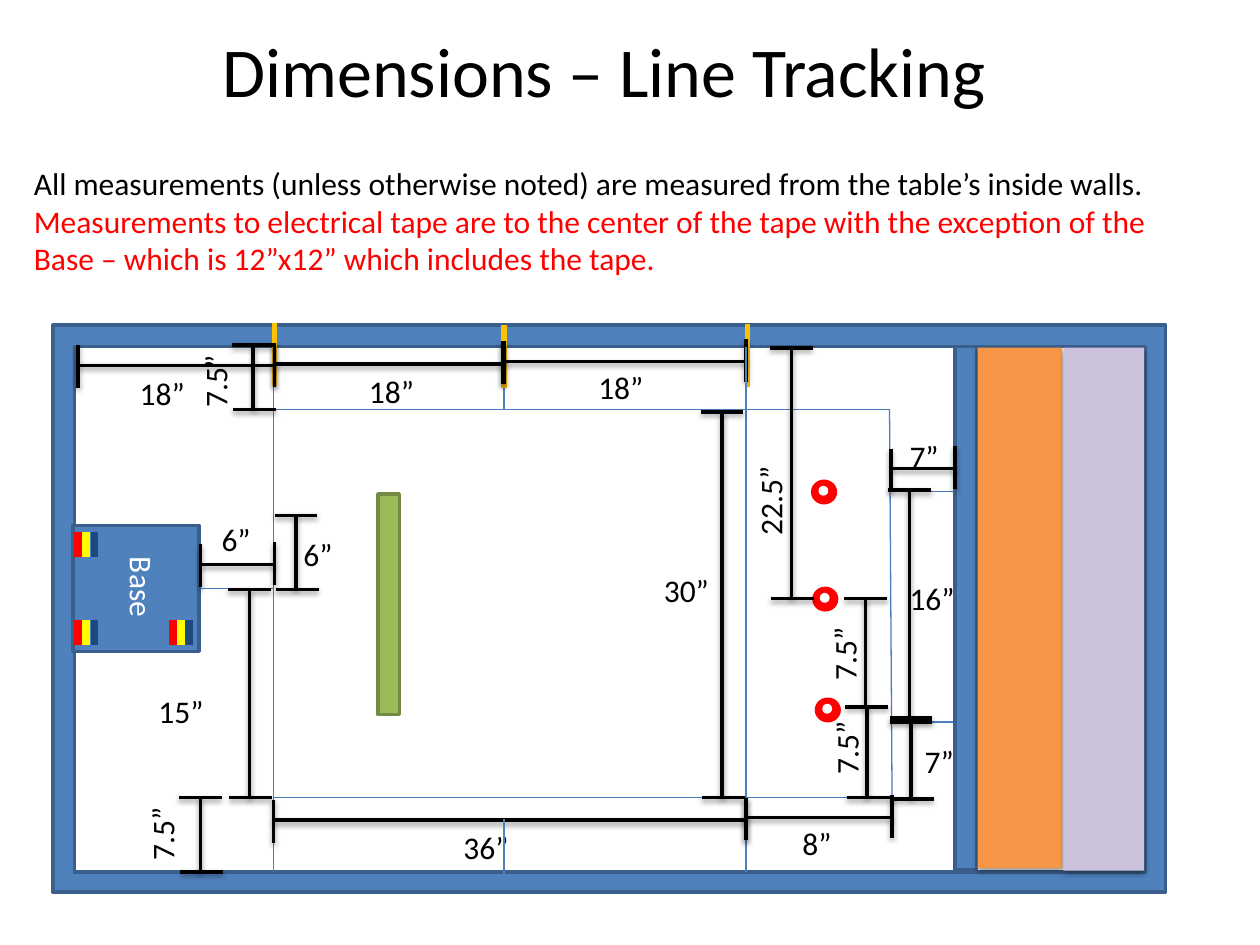
"""Build the line tracking course dimensions slide."""
from lxml.etree import SubElement
from pptx import Presentation
from pptx.dml.color import RGBColor
from pptx.enum.shapes import MSO_CONNECTOR as Connector, MSO_SHAPE as Shape
from pptx.enum.text import PP_ALIGN as Align
from pptx.oxml.ns import qn
from pptx.util import Inches, Pt

BLACK = RGBColor(0x00, 0x00, 0x00)
WHITE = RGBColor(0xFF, 0xFF, 0xFF)
RED = RGBColor(0xFF, 0x00, 0x00)
YELLOW = RGBColor(0xFF, 0xFF, 0x00)
NAVY = RGBColor(0x1F, 0x49, 0x7D)
BLUE = RGBColor(0x4F, 0x81, 0xBD)
EDGE = RGBColor(0x3A, 0x5F, 0x8C)
TAPE = RGBColor(0x4B, 0x7E, 0xBC)
GREEN = RGBColor(0x9B, 0xBB, 0x59)
GREEN_EDGE = RGBColor(0x73, 0x8A, 0x42)
ORANGE = RGBColor(0xF7, 0x96, 0x46)
LILAC = RGBColor(0xCC, 0xC1, 0xDA)
GOLD = RGBColor(0xFF, 0xC0, 0x00)

TITLE = "Dimensions – Line Tracking"
NOTES = [
    ("All measurements (unless otherwise noted) are measured from the table’s inside walls.", BLACK),
    ("Measurements to electrical tape are to the center of the tape with the exception of the "
     "Base – which is 12”x12” which includes the tape.", RED),
]
WALLS = [(0.42, 2.58, 8.83, 4.5, BLUE), (0.59, 2.75, 8.5, 4.17, WHITE)]
DIVIDER = (7.58, 2.75, 0.17, 4.15)
BARRIER = (3, 3.92, 0.17, 1.75)
ZONES = [(7.76, 2.76, 0.67, 4.13, ORANGE), (8.44, 2.76, 0.64, 4.15, LILAC)]
BASE = (0.58, 4.17, 1, 1)
FLAGS = [(0.62, 4.92), (1.37, 4.92), (0.62, 4.22)]
FLAG_COLORS = [RED, YELLOW, NAVY]
RINGS = [(6.46, 4.67), (6.45, 3.82), (6.48, 5.55)]
GUIDES = [(5.92, 6.92, 5.92, 6.42), (4, 3.25, 4, 2.75)]
FRONT_GUIDES = [(5.92, 3.25, 5.92, 2.75), (4, 7, 4, 6.5)]
TAPES = [
    (1.58, 4.67, 2.17, 4.67), (2.17, 4.67, 2.17, 2.75), (5.92, 3.25, 2.17, 3.25),
    (5.92, 3.25, 5.92, 6.33), (5.92, 6.33, 2.17, 6.33), (2.17, 6.92, 2.17, 4.67),
    (5.92, 3.25, 7.06, 3.25), (5.92, 6.33, 7.08, 6.33), (7.06, 3.25, 7.08, 6.33),
    (7.07, 3.9, 7.58, 3.9), (7.08, 5.73, 7.56, 5.73),
]
GOLD_MARKS = [(2.18, 2.56), (5.93, 2.57), (4, 2.58)]
# label, start, end, level, label left, top, width
HORIZONTAL = [
    ("36”", 2.17, 5.92, 6.51, 3.58, 6.52, 0.58),
    ("6”", 1.59, 2.18, 4.48, 1.66, 4.08, 0.58),
    ("8”", 5.92, 7.08, 6.49, 6.27, 6.49, 0.6),
    ("7”", 7.07, 7.58, 3.72, 7.12, 3.42, 0.55),
    ("18”", 0.62, 2.18, 2.9, 1.01, 2.92, 0.82),
    ("18”", 2.18, 4, 2.89, 2.83, 2.9, 0.95),
    ("18”", 3.99, 5.92, 2.87, 4.65, 2.87, 1.01),
]
# label, top, bottom, level, label left, top, width, label rotation, has lower tick
VERTICAL = [
    ("15”", 4.68, 6.33, 1.98, 1.16, 5.44, 0.76, 0, True),
    ("6”", 4.09, 4.68, 2.35, 2.31, 4.2, 0.58, 0, True),
    ("30”", 3.27, 6.33, 5.73, 5.17, 4.48, 0.58, 0, True),
    ("7”", 5.73, 6.34, 7.23, 7.24, 5.84, 0.46, 0, True),
    ("16”", 3.89, 5.7, 7.22, 7.12, 4.55, 0.59, 0, True),
    ("7.5”", 4.75, 5.61, 6.87, 6.31, 4.91, 0.78, 270, False),
    ("7.5”", 5.61, 6.33, 6.88, 6.31, 5.64, 0.81, 270, True),
    ("22.5”", 2.76, 4.75, 6.28, 5.72, 3.76, 0.78, 270, True),
    ("7.5”", 6.33, 6.92, 1.59, 0.88, 6.32, 0.81, 270, True),
    ("7.5”", 2.74, 3.25, 2.01, 1.3, 2.73, 0.81, 270, True),
]


def add_effects(shape, shadow):
    properties = shape._element.spPr
    for effects in properties.findall(qn("a:effectLst")):
        properties.remove(effects)
    effects = SubElement(properties, qn("a:effectLst"))
    if shadow:
        outer = SubElement(effects, qn("a:outerShdw"), blurRad=str(Pt(3.1)), dist=str(Pt(1.6)),
                           dir="5400000", rotWithShape="0")
        color = SubElement(outer, qn("a:srgbClr"), val="000000")
        SubElement(color, qn("a:alpha"), val="38000")


def add_block(slide, left, top, width, height, fill, line=None, kind=Shape.RECTANGLE, shadow=False):
    shape = slide.shapes.add_shape(kind, Inches(left), Inches(top), Inches(width), Inches(height))
    shape.fill.solid()
    shape.fill.fore_color.rgb = fill
    if line is None:
        shape.line.fill.background()
    else:
        shape.line.color.rgb = line
        shape.line.width = Pt(2)
    add_effects(shape, shadow)
    return shape


def add_line(slide, ends, color, width, shadow=False):
    line = slide.shapes.add_connector(Connector.STRAIGHT, *map(Inches, ends))
    line.line.color.rgb = color
    line.line.width = Pt(width)
    add_effects(line, shadow)


def add_text(slide, left, top, width, height, paragraphs, size=18, align=Align.LEFT, rotation=0):
    box = slide.shapes.add_textbox(Inches(left), Inches(top), Inches(width), Inches(height))
    box.rotation = rotation
    frame = box.text_frame
    frame.word_wrap = True
    frame.text = "\n".join(text for text, _ in paragraphs)
    for paragraph, (_, color) in zip(frame.paragraphs, paragraphs):
        paragraph.alignment = align
        font = paragraph.runs[0].font
        font.name, font.size = "Calibri", Pt(size)
        font.color.rgb = color


def add_dimension(slide, label, start, end, level, left, top, width,
                  rotation=0, end_tick=True, vertical=False):
    before, after = (0.17, 0.18) if vertical else (0.18, 0.16)
    ticks = [(start, level - before, start, level + 0.17)]
    if end_tick:
        ticks.append((end, level - 0.16, end, level + 0.18))
    if not vertical:
        ticks = [(start, level - after, start, level + before),
                 (end, level - before, end, level + after)]
    for x1, y1, x2, y2 in [*ticks, (start, level, end, level)]:
        ends = (y1, x1, y2, x2) if vertical else (x1, y1, x2, y2)
        add_line(slide, ends, BLACK, 2, shadow=True)
    add_text(slide, left, top, width, 0.4, [(label, BLACK)], rotation=rotation)


def add_field(slide):
    for *place, fill in WALLS:
        add_block(slide, *place, fill, EDGE)
    for ends in GUIDES:
        add_line(slide, ends, BLUE, 1)
    add_block(slide, *BASE, BLUE, EDGE).rotation = 90
    add_text(slide, 0.78, 4.46, 0.7, 0.4, [("Base", WHITE)], align=Align.CENTER, rotation=90)
    for left, top in FLAGS:
        for index, color in enumerate(FLAG_COLORS):
            x = left + index * 0.065
            add_line(slide, (x, top, x, top + 0.2), color, 4.5)
    add_block(slide, *DIVIDER, BLUE, EDGE)
    add_block(slide, *BARRIER, GREEN, GREEN_EDGE)
    for *place, fill in ZONES:
        add_block(slide, *place, fill, shadow=True)
    for left, top in RINGS:
        add_block(slide, left, top, 0.18, 0.17, RED, RED, Shape.OVAL)
        add_block(slide, left + 0.06, top + 0.05, 0.05, 0.05, WHITE, WHITE, Shape.OVAL)
    for ends in TAPES:
        add_line(slide, ends, TAPE, 0.75)
    for x, top in GOLD_MARKS:
        add_line(slide, (x, top, x, top + 0.5), GOLD, 3)


def main():
    presentation = Presentation()
    presentation.slide_width, presentation.slide_height = Inches(10), Inches(7.5)
    slide = presentation.slides.add_slide(presentation.slide_layouts[6])
    add_text(slide, 0.42, 0.17, 8.75, 0.77, [(TITLE, BLACK)], 40, Align.CENTER)
    add_text(slide, 0.17, 1.25, 9.39, 1.01, NOTES)
    add_field(slide)
    for dimension in HORIZONTAL:
        add_dimension(slide, *dimension)
    for dimension in VERTICAL:
        add_dimension(slide, *dimension, vertical=True)
    for ends in FRONT_GUIDES:
        add_line(slide, ends, BLUE, 1)
    presentation.save("out.pptx")


if __name__ == "__main__":
    main()
